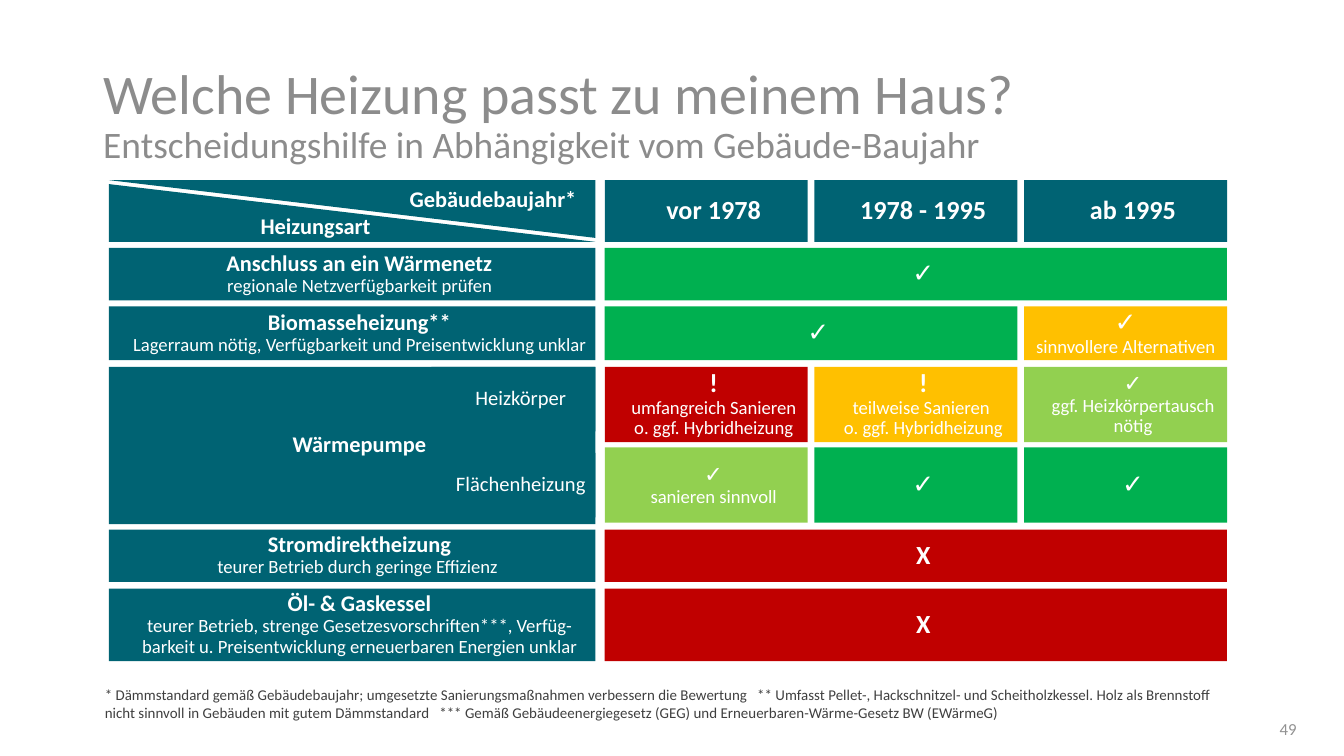
from copy import deepcopy

from pptx import Presentation
from pptx.dml.color import RGBColor
from pptx.enum import shapes, text
from pptx.oxml.ns import qn
from pptx.util import Inches, Pt

FONT = "Calibri"
COLORS = {
    "teal": "006373", "green": "00B050", "lime": "92D050", "amber": "FFC000",
    "red": "C00000", "white": "FFFFFF", "title": "8C8C8C", "note": "3F3F3F",
    "page": "929292",
}
LEFT, WIDE = 0.81, 3.62
COL, STEP, CELL = 4.5, 1.56, 1.51
# Top and height of each table row
ROWS = [(1.34, 0.46), (1.845, 0.39), (2.28, 0.4), (2.73, 0.56),
        (3.33, 0.56), (3.94, 0.39), (4.38, 0.54)]
LABELS = [
    (1, "Anschluss an ein Wärmenetz\nregionale Netzverfügbarkeit prüfen"),
    (2, "Biomasseheizung**\n"
        "Lagerraum nötig, Verfügbarkeit und Preisentwicklung unklar"),
    (5, "Stromdirektheizung\nteurer Betrieb durch geringe Effizienz "),
    (6, "Öl- & Gaskessel\nteurer Betrieb, strenge Gesetzesvorschriften***, "
        "Verfüg-barkeit u. Preisentwicklung erneuerbaren Energien unklar"),
]
# Row, column, span, colour, wording, size of the first line
CELLS = [
    (0, 0, 1, "teal", "vor 1978", 14),
    (0, 1, 1, "teal", "1978 - 1995", 14),
    (0, 2, 1, "teal", "ab 1995", 14),
    (1, 0, 3, "green", "✓", 14),
    (2, 0, 2, "green", "✓", 14),
    (2, 2, 1, "amber", "✓\nsinnvollere Alternativen", 14),
    (3, 0, 1, "red", "!\numfangreich Sanieren o. ggf. Hybridheizung", 14),
    (3, 1, 1, "amber", "!\nteilweise Sanieren \no. ggf. Hybridheizung", 14),
    (3, 2, 1, "lime", "✓\nggf. Heizkörpertausch nötig", 12),
    (4, 0, 1, "lime", "✓\nsanieren sinnvoll", 12),
    (4, 1, 1, "green", "✓", 14),
    (4, 2, 1, "green", "✓", 14),
    (5, 0, 3, "red", "X", 14),
    (6, 0, 3, "red", "X", 14),
]
NOTE = (
    "* Dämmstandard gemäß Gebäudebaujahr; umgesetzte Sanierungsmaßnahmen "
    "verbessern die Bewertung   ** Umfasst Pellet-, Hackschnitzel- und "
    "Scheitholzkessel. Holz als Brennstoff nicht sinnvoll in Gebäuden mit "
    "gutem Dämmstandard   *** Gemäß Gebäudeenergiegesetz (GEG) und "
    "Erneuerbaren-Wärme-Gesetz BW (EWärmeG)"
)


def rgb(name):
    return RGBColor.from_string(COLORS[name])


def write(frame, words, size, color="white", bold=False, small=10):
    """Set one paragraph whose first line is styled apart from the rest."""
    para = frame.paragraphs[0]
    para.text = words.replace("\n", "\v")
    for i, run in enumerate(para.runs):
        font = run.font
        font.name = FONT
        font.size = Pt(small if i else size)
        font.bold = bold and i == 0
        font.color.rgb = rgb(color)
    # Line breaks take the style of the line they end
    for mark, run in zip(para._p.findall(qn("a:br")), para.runs):
        mark.append(deepcopy(run._r.rPr))
    return para


def inset(frame, left, right):
    frame.margin_left, frame.margin_right = Inches(left), Inches(right)
    frame.margin_top = frame.margin_bottom = Inches(0.05)


def add_form(slide, kind, box, color):
    form = slide.shapes.add_shape(kind, *map(Inches, box))
    form.shadow.inherit = False
    form.fill.solid()
    form.fill.fore_color.rgb = rgb(color)
    form.line.fill.background()
    return form


def add_cell(slide, box, color, words, size, bold=True, pad=(0.16, 0.05)):
    form = add_form(slide, shapes.MSO_SHAPE.RECTANGLE, box, color)
    frame = form.text_frame
    frame.word_wrap = True
    frame.vertical_anchor = text.MSO_ANCHOR.MIDDLE
    inset(frame, *pad)
    para = write(frame, words, size, bold=bold)
    para.alignment = text.PP_ALIGN.CENTER
    para.line_spacing = 0.9


def add_text(slide, box, words, size, color, bold=False, small=10, wrap=True):
    frame = slide.shapes.add_textbox(*map(Inches, box)).text_frame
    frame.word_wrap = wrap
    return write(frame, words, size, color, bold, small), frame


def add_corner(slide):
    """Header cell split by a white diagonal."""
    kind = shapes.MSO_SHAPE.RIGHT_TRIANGLE
    add_form(slide, kind, (LEFT, 1.37, WIDE, 0.43), "teal")
    add_form(slide, kind, (LEFT, 1.34, WIDE, 0.43), "teal").rotation = 180
    add_text(slide, (1.84, 1.53, 3.51, 0.3), "Heizungsart", 12, "white", True)
    add_text(slide, (2.95, 1.33, 1.94, 0.3), "Gebäudebaujahr*", 12,
             "white", True)


def add_labels(slide):
    for row, words in LABELS:
        top, high = ROWS[row]
        add_cell(slide, (LEFT, top, WIDE, high), "teal", words, 12)
    add_cell(slide, (LEFT, 2.73, WIDE, 1.17), "teal", "Wärmepumpe", 12)
    for top, words in ((2.73, "Heizkörper"), (3.37, "Flächenheizung")):
        add_cell(slide, (3.21, top, 1.22, 0.48), "teal", words, 11, False)


def add_grid(slide):
    for row, col, span, color, words, size in CELLS:
        top, high = ROWS[row]
        box = (COL + col * STEP, top, CELL + (span - 1) * STEP, high)
        pad = (0.08, 0.08) if "Alternativen" in words else (0.16, 0.05)
        add_cell(slide, box, color, words, size, pad=pad)


def main():
    deck = Presentation()
    deck.slide_width = Inches(10)
    deck.slide_height = deck.slide_width * 9 // 16
    slide = deck.slides.add_slide(deck.slide_layouts[6])

    para, frame = add_text(slide, (9.51, 5.29, 0.15, 0.27), "49", 9, "page",
                           wrap=False)
    para.alignment = text.PP_ALIGN.CENTER
    frame.vertical_anchor = text.MSO_ANCHOR.MIDDLE
    inset(frame, 0, 0)

    para, frame = add_text(
        slide, (0.67, 0.44, 9.24, 0.53),
        "Welche Heizung passt zu meinem Haus?\n"
        "Entscheidungshilfe in Abhängigkeit vom Gebäude-Baujahr",
        30, "title", small=20)
    para.line_spacing = 0.9

    add_corner(slide)
    add_labels(slide)
    add_grid(slide)

    para, frame = add_text(slide, (0.67, 5.05, 8.46, 0.37), NOTE, 8, "note")
    frame.vertical_anchor = text.MSO_ANCHOR.BOTTOM
    inset(frame, 0.11, 0.08)
    deck.save("out.pptx")


if __name__ == "__main__":
    main()
